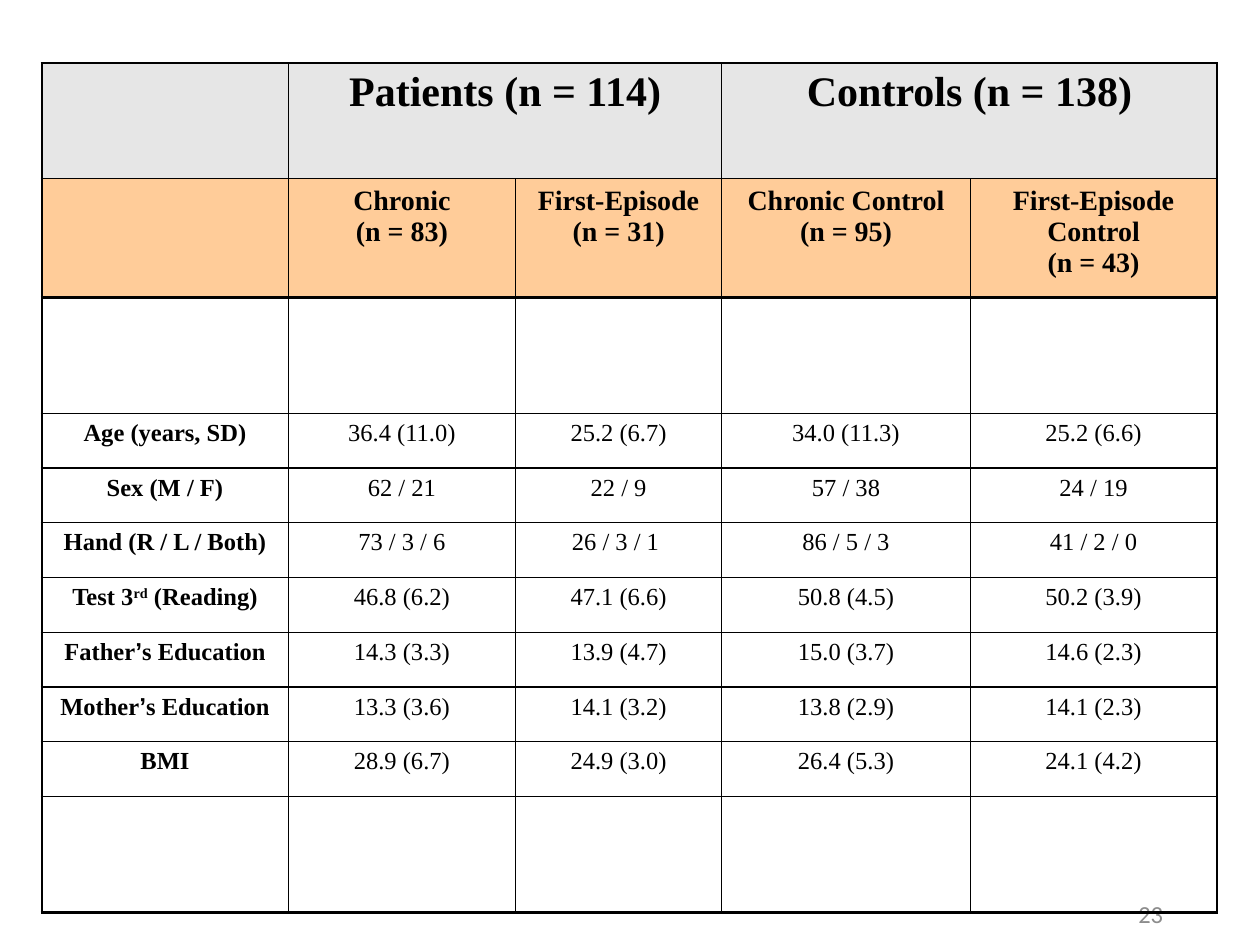
from dataclasses import dataclass

from lxml import etree
from pptx import Presentation
from pptx import util as u
from pptx.dml import color
from pptx.enum import text
from pptx.oxml import ns
from pptx.table import _Cell as Cell

SERIF = "Times New Roman"
BLACK = "000000"
WIDTHS = [1.96, 1.8, 1.64, 1.97, 1.96]
TALL, LOW = 0.92, 0.435


@dataclass
class Run:
    text: str
    face: str | None = None
    base: int = 0


@dataclass
class Row:
    label: list[Run]
    data: list[str]


def school(parent: str) -> list[Run]:
    return [Run(parent), Run("’", "Arial"), Run("s Education")]


HEADS = ["Chronic\n(n = 83)", "First-Episode\n(n = 31)",
         "Chronic Control\n(n = 95)", "First-Episode Control\n(n = 43)"]
ROWS = [
    Row([Run("Age (years, SD)")], ["36.4 (11.0)", "25.2 (6.7)", "34.0 (11.3)", "25.2 (6.6)"]),
    Row([Run("Sex (M / F)")], ["62 / 21", "22 / 9", "57 / 38", "24 / 19"]),
    Row([Run("Hand (R / L / Both)")], ["73 / 3 / 6", "26 / 3 / 1 ", "86 / 5 / 3", "41 / 2 / 0"]),
    Row([Run("Test 3"), Run("rd", base=30), Run(" (Reading)")],
        ["46.8 (6.2)", "47.1 (6.6)", "50.8 (4.5)", "50.2 (3.9)"]),
    Row(school("Father"), ["14.3 (3.3)", "13.9 (4.7)", "15.0 (3.7)", "14.6 (2.3)"]),
    Row(school("Mother"), ["13.3 (3.6)", "14.1 (3.2)", "13.8 (2.9)", "14.1 (2.3)"]),
    Row([Run("BMI")], ["28.9 (6.7)", "24.9 (3.0)", "26.4 (5.3)", "24.1 (4.2)"]),
]
HEIGHTS = [TALL, 0.94, TALL] + [LOW] * len(ROWS) + [TALL]


def tint(code: str) -> color.RGBColor:
    return color.RGBColor.from_string(code)


def style(para, size: float, bold: bool = False, face: str = SERIF,
          code: str = BLACK, align=text.PP_ALIGN.CENTER) -> None:
    para.alignment = align
    font = para.font
    font.name, font.size, font.bold = face, u.Pt(size), bold
    font.color.rgb = tint(code)


def write(cell: Cell, words: str, size: float, bold: bool = False) -> None:
    cell.text = words
    for para in cell.text_frame.paragraphs:
        style(para, size, bold)


def label(cell: Cell, runs: list[Run]) -> None:
    para = cell.text_frame.paragraphs[0]
    style(para, 14, True)
    for item in runs:
        run = para.add_run()
        run.text = item.text
        if item.face:
            run.font.name = item.face
        if item.base:
            run._r.get_or_add_rPr().set("baseline", str(item.base * 1000))


def edge(cell: Cell, side: str, width: float) -> None:
    props = cell._tc.get_or_add_tcPr()
    line = etree.SubElement(props, ns.qn(f"a:ln{side}"), w=str(u.Pt(width)))
    fill = etree.SubElement(line, ns.qn("a:solidFill"))
    etree.SubElement(fill, ns.qn("a:srgbClr"), val=BLACK)


def frame(cell: Cell, row: int, col: int) -> None:
    last = len(HEIGHTS) - 1
    edge(cell, "L", 1.25 if col == 0 else 0.75)
    edge(cell, "R", 1.25 if col == len(WIDTHS) - 1 else 0.75)
    edge(cell, "T", {0: 1.25, 2: 2}.get(row, 0.75))
    edge(cell, "B", 2 if row in (1, last) else 0.75)
    code = {0: "E6E6E6", 1: "FFCC99"}.get(row)
    if code:
        cell.fill.solid()
        cell.fill.fore_color.rgb = tint(code)
    else:
        cell.fill.background()


def number(slide) -> None:
    box = slide.shapes.add_textbox(u.Inches(7.25), u.Inches(7), u.Inches(2.08), u.Inches(0.5))
    body = box.text_frame
    body.word_wrap = True
    body.vertical_anchor = text.MSO_ANCHOR.MIDDLE
    body.text = "23"
    style(body.paragraphs[0], 14, face="Calibri", code="8C8C8C", align=text.PP_ALIGN.RIGHT)


def grid(slide) -> None:
    table = slide.shapes.add_table(
        len(HEIGHTS), len(WIDTHS), u.Inches(0.33), u.Inches(0.5),
        u.Inches(sum(WIDTHS)), u.Inches(sum(HEIGHTS))).table
    table.first_row = table.horz_banding = False
    for col, width in zip(table.columns, WIDTHS):
        col.width = u.Inches(width)
    for row, height in enumerate(HEIGHTS):
        table.rows[row].height = u.Inches(height)
        for col in range(len(WIDTHS)):
            frame(table.cell(row, col), row, col)
    for col, words in ((1, "Patients (n = 114)"), (3, "Controls (n = 138)")):
        table.cell(0, col).merge(table.cell(0, col + 1))
        write(table.cell(0, col), words, 24, True)
    for col, words in enumerate(HEADS, 1):
        write(table.cell(1, col), words, 16, True)
    for row, item in enumerate(ROWS, 3):
        label(table.cell(row, 0), item.label)
        for col, words in enumerate(item.data, 1):
            write(table.cell(row, col), words, 14)


def main() -> None:
    deck = Presentation()
    deck.slide_width, deck.slide_height = u.Inches(10), u.Inches(7.5)
    slide = deck.slides.add_slide(deck.slide_layouts[6])
    number(slide)
    grid(slide)
    deck.save("out.pptx")


if __name__ == "__main__":
    main()
